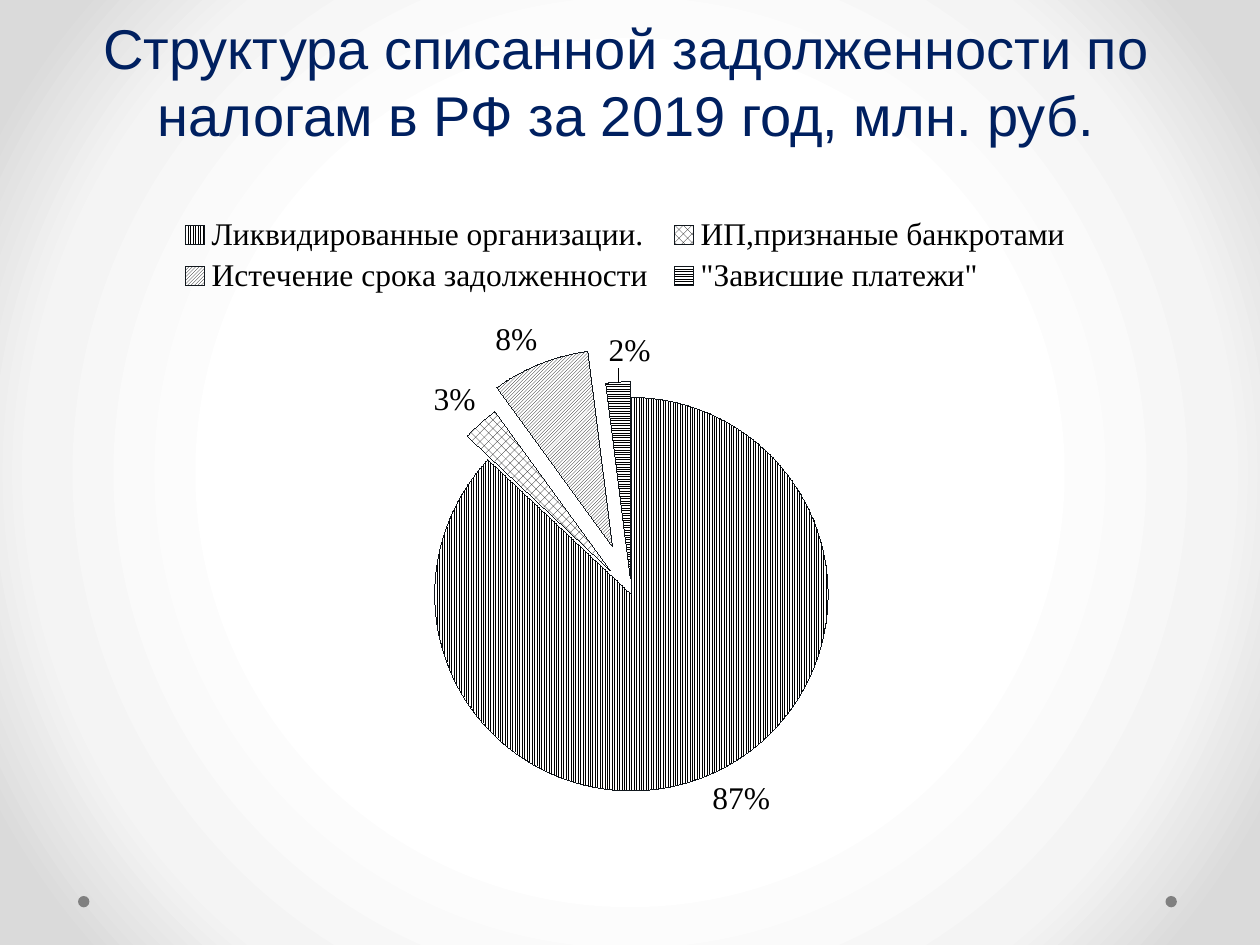
"""Build a slide with a pie chart of written-off tax debt."""
from lxml import etree
from pptx import Presentation
from pptx.chart.data import CategoryChartData
from pptx.dml.color import RGBColor
from pptx.enum.chart import XL_CHART_TYPE, XL_LABEL_POSITION, XL_LEGEND_POSITION
from pptx.enum.dml import MSO_PATTERN
from pptx.enum.shapes import MSO_SHAPE
from pptx.enum.text import MSO_ANCHOR, MSO_AUTO_SIZE, PP_ALIGN
from pptx.oxml import parse_xml
from pptx.oxml.ns import qn
from pptx.util import Pt

TITLE = "Структура списанной задолженности по налогам в РФ за 2019 год, млн. руб."
REASONS = [
    ("Ликвидированные организации.", 0.87, MSO_PATTERN.LIGHT_VERTICAL, 0),
    ("ИП,признаные банкротами", 0.03, MSO_PATTERN.PERCENT_50, 16),
    ("Истечение срока задолженности", 0.08, MSO_PATTERN.LIGHT_UPWARD_DIAGONAL, 26),
    ('"Зависшие платежи"', 0.02, MSO_PATTERN.LIGHT_HORIZONTAL, 8),
]
COLORS = {"title": "002060", "ink": "000000", "paper": "FFFFFF",
          "outline": "11171D", "dot": "808080"}
BACKDROP = [(50, "FFFFFF"), (76, "F4F4F4"), (92, "DADADA")]
TITLE_BOX = {"left": Pt(-2), "top": Pt(-2), "width": Pt(720), "height": Pt(90)}
CHART_BOX = (Pt(14.4), Pt(116.6), Pt(686), Pt(368.6))
DOT_SIZE, DOT_TOP, DOT_LEFTS = 6.5, 512, (44.6, 666)
PIE_AREA = {"x": 0.34, "y": 0.3, "w": 0.33, "h": 0.61}
LEGEND_AREA = {"x": 0.12, "y": 0.01, "w": 0.76, "h": 0.14}
LAST_LABEL_SHIFT = {"x": 0.01, "y": -0.01}


def color(name):
    return RGBColor.from_string(COLORS[name])


def apply(target, values):
    for key, value in values.items():
        setattr(target, key, value)


def paint_backdrop(slide):
    slide.background.fill.solid()
    solid = next(slide.background._cSld.iter(qn("a:solidFill")))
    stops = "".join(f'<a:gs pos="{at * 1000}"><a:srgbClr val="{shade}"/></a:gs>'
                    for at, shade in BACKDROP)
    gradient = parse_xml(
        '<a:gradFill xmlns:a="http://schemas.openxmlformats.org/drawingml/2006/main" '
        f'rotWithShape="1"><a:gsLst>{stops}</a:gsLst><a:path path="circle">'
        '<a:fillToRect l="50000" t="50000" r="50000" b="50000"/></a:path></a:gradFill>')
    solid.getparent().replace(solid, gradient)


def place(part, index, area, inner=False):
    for old in part.findall(qn("c:layout")):
        part.remove(old)
    layout = etree.Element(qn("c:layout"))
    manual = etree.SubElement(layout, qn("c:manualLayout"))
    modes = {"layoutTarget": "inner"} if inner else {}
    if "w" in area:
        modes |= {"xMode": "edge", "yMode": "edge"}
    for key, value in (modes | area).items():
        etree.SubElement(manual, qn(f"c:{key}")).set("val", str(value))
    part.insert(index, layout)


def add_dots(slide):
    for left in DOT_LEFTS:
        dot = slide.shapes.add_shape(MSO_SHAPE.OVAL, Pt(left), Pt(DOT_TOP),
                                     Pt(DOT_SIZE), Pt(DOT_SIZE))
        dot.shadow.inherit = False
        dot.fill.solid()
        dot.fill.fore_color.rgb = color("dot")
        dot.line.fill.background()


def write_title(slide):
    title = slide.shapes.title
    apply(title, TITLE_BOX)
    title.text_frame.text = TITLE
    apply(title.text_frame, {"vertical_anchor": MSO_ANCHOR.BOTTOM, "word_wrap": True,
                             "auto_size": MSO_AUTO_SIZE.NONE})
    paragraph = title.text_frame.paragraphs[0]
    paragraph.alignment = PP_ALIGN.CENTER
    font = paragraph.runs[0].font
    apply(font, {"name": "Arial", "size": Pt(32)})
    font.color.rgb = color("title")


def style_slice(point, pattern, offset):
    fill, line = point.format.fill, point.format.line
    fill.patterned()
    fill.pattern = pattern
    fill.fore_color.rgb = color("ink")
    fill.back_color.rgb = color("paper")
    line.color.rgb = color("outline")
    line.width = Pt(0)
    if offset:
        explosion = etree.Element(qn("c:explosion"))
        explosion.set("val", str(offset))
        fill._xPr.addprevious(explosion)


def add_pie(slide):
    debts = CategoryChartData(number_format="0%")
    debts.categories = [reason[0] for reason in REASONS]
    debts.add_series("Series 1", [reason[1] for reason in REASONS])
    chart = slide.shapes.add_chart(XL_CHART_TYPE.PIE, *CHART_BOX, debts).chart
    apply(chart, {"has_title": False, "has_legend": True})
    apply(chart.font, {"name": "Times New Roman", "size": Pt(18)})
    chart.font.color.rgb = color("ink")
    apply(chart.legend, {"position": XL_LEGEND_POSITION.TOP, "include_in_layout": False})
    place(chart.legend._element, 1, LEGEND_AREA)
    plot = chart.plots[0]
    place(plot._element.getparent(), 0, PIE_AREA, inner=True)
    plot.vary_by_categories = True
    series = plot.series[0]
    apply(series.data_labels, {"show_value": True, "number_format": "0%",
                               "number_format_is_linked": False,
                               "position": XL_LABEL_POSITION.OUTSIDE_END})
    for index, (_, _, pattern, offset) in enumerate(REASONS):
        style_slice(series.points[index], pattern, offset)
    series.points[len(REASONS) - 1].data_label.position = XL_LABEL_POSITION.OUTSIDE_END
    place(next(series._element.iter(qn("c:dLbl"))), 1, LAST_LABEL_SHIFT)


def main():
    deck = Presentation()
    apply(deck, {"slide_width": Pt(720), "slide_height": Pt(540)})
    slide = deck.slides.add_slide(deck.slide_layouts[5])
    paint_backdrop(slide)
    add_dots(slide)
    write_title(slide)
    add_pie(slide)
    deck.save("out.pptx")


if __name__ == "__main__":
    main()
